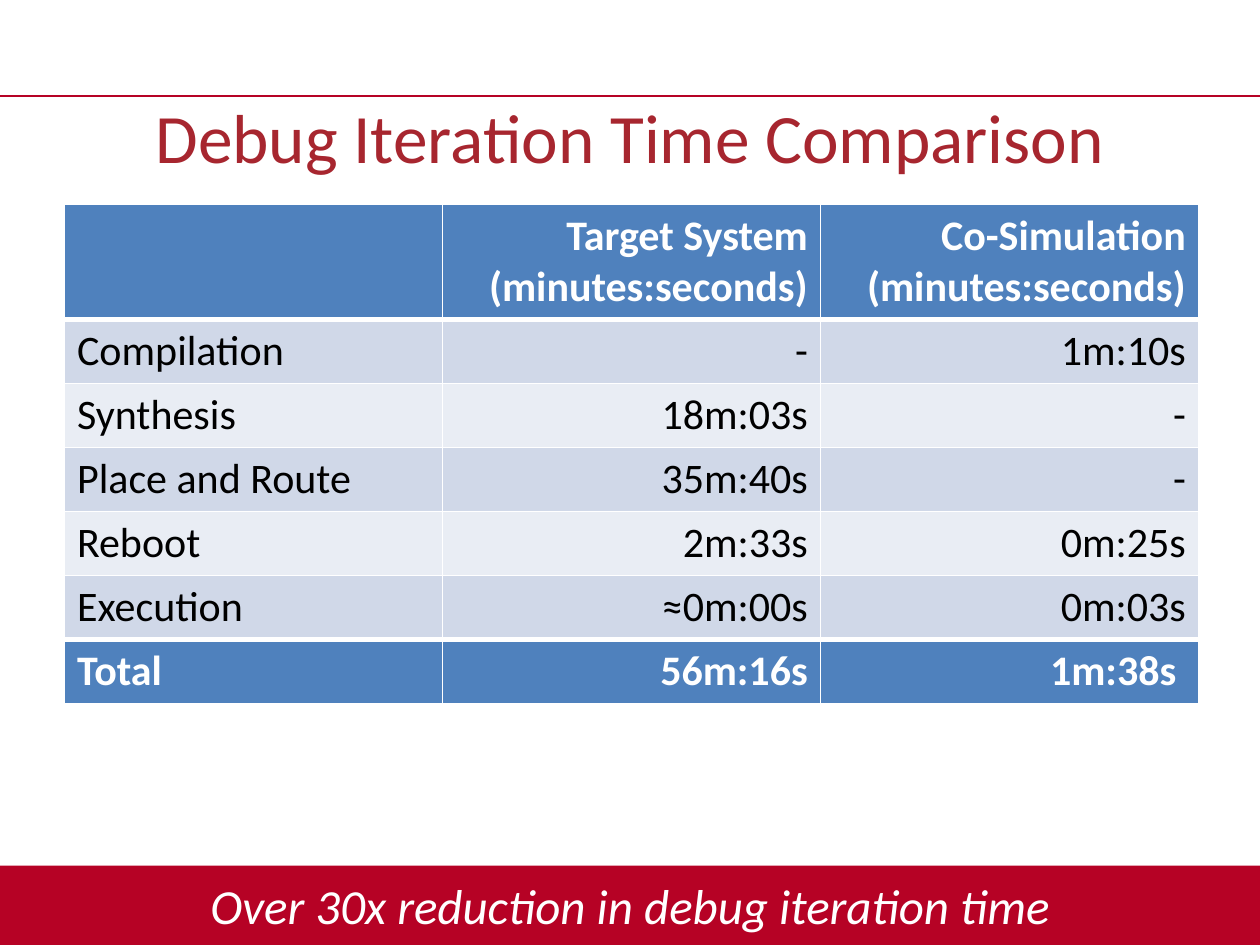
from lxml.etree import SubElement as Sub
from pptx import Presentation
from pptx.dml.color import RGBColor
from pptx.enum.shapes import MSO_CONNECTOR as Link, MSO_SHAPE as Shape
from pptx.enum.text import MSO_ANCHOR as Anchor, PP_ALIGN as Align
from pptx.oxml.ns import qn
from pptx.util import Cm, Pt

RED = RGBColor(0xB6, 0x02, 0x25)
BRICK = RGBColor(0xA7, 0x26, 0x2F)
BLUE = RGBColor(0x4F, 0x81, 0xBD)
PALE = RGBColor(0xD0, 0xD8, 0xE8)
LIGHT = RGBColor(0xE9, 0xED, 0xF4)
WHITE = RGBColor(0xFF, 0xFF, 0xFF)
BLACK = RGBColor(0x00, 0x00, 0x00)

WIDE, HIGH = 25.4, 19.05
BAND = 1.6
RULE = 1.93

TIMES = [
    ("", "Target System\n(minutes:seconds)", "Co-Simulation\n(minutes:seconds)"),
    ("Compilation", "-", "1m:10s"),
    ("Synthesis", "18m:03s", "-"),
    ("Place and Route", "35m:40s", "-"),
    ("Reboot", "2m:33s", "0m:25s"),
    ("Execution", "≈0m:00s", "0m:03s"),
    ("Total", "56m:16s", "1m:38s "),
]


class Deck:
    """Holds the text style and the current slide, and draws its elements."""

    def __init__(self, face):
        self.face = face
        self.show = Presentation()
        self.show.slide_width, self.show.slide_height = Cm(WIDE), Cm(HIGH)
        self.slide = self.show.slides.add_slide(self.show.slide_layouts[5])

    def label(self, frame, text, size, color, align, bold=False, italic=False):
        frame.text = text
        for para in frame.paragraphs:
            para.alignment = align
            for run in para.runs:
                font = run.font
                font.name, font.size = self.face, Pt(size)
                font.bold, font.italic = bold, italic
                font.color.rgb = color

    def title(self, text, top):
        box = self.slide.shapes.title
        box.left, box.top, box.width, box.height = Cm(0), Cm(top), Cm(WIDE), Cm(BAND)
        box.text_frame.vertical_anchor = Anchor.MIDDLE
        self.label(box.text_frame, text, 39.6, BRICK, Align.CENTER)

    def rule(self, top):
        line = self.slide.shapes.add_connector(
            Link.STRAIGHT, Cm(0), Cm(top), Cm(WIDE), Cm(top))
        line.line.color.rgb, line.line.width = RED, Pt(1)
        Sub(line._element.spPr, qn("a:effectLst"))

    def banner(self, text):
        bar = self.slide.shapes.add_shape(
            Shape.RECTANGLE, Cm(0), Cm(HIGH - BAND), Cm(WIDE), Cm(BAND))
        bar.shadow.inherit = False
        bar.fill.solid()
        bar.fill.fore_color.rgb = RED
        bar.line.fill.background()
        bar.text_frame.vertical_anchor = Anchor.MIDDLE
        self.label(bar.text_frame, text, 28, WHITE, Align.CENTER, italic=True)

    def edges(self, cell, top, base):
        props = cell._tc.get_or_add_tcPr()
        for side, width in zip("LRTB", (1, 1, top, base)):
            line = Sub(props, qn(f"a:ln{side}"), w=str(Pt(width)))
            fill = Sub(line, qn("a:solidFill"))
            Sub(fill, qn("a:srgbClr"), val=str(WHITE))

    def table(self, rows, left, top, width, head, body):
        last, count = len(rows) - 1, len(rows[0])
        grid = self.slide.shapes.add_table(
            len(rows), count, Cm(left), Cm(top), Cm(width), Cm(head + body * last)).table
        for col in grid.columns:
            col.width = Cm(width / count)
        for i, row in enumerate(rows):
            grid.rows[i].height = Cm(body if i else head)
            strong = i in (0, last)
            shade = BLUE if strong else PALE if i % 2 else LIGHT
            for j, text in enumerate(row):
                cell = grid.cell(i, j)
                self.edges(cell, 3 if i in (1, last) else 1, 3 if i in (0, last - 1) else 1)
                cell.fill.solid()
                cell.fill.fore_color.rgb = shade
                self.label(cell.text_frame, text, 24, WHITE if strong else BLACK,
                           Align.RIGHT if j else Align.LEFT, bold=strong)


def main():
    deck = Deck("Calibri")
    deck.rule(RULE)
    deck.title("Debug Iteration Time Comparison", RULE)
    deck.table(TIMES, 1.3, 4.12, 22.86, 2.3, 1.29)
    deck.banner("Over 30x reduction in debug iteration time")
    deck.show.save("out.pptx")


if __name__ == "__main__":
    main()
